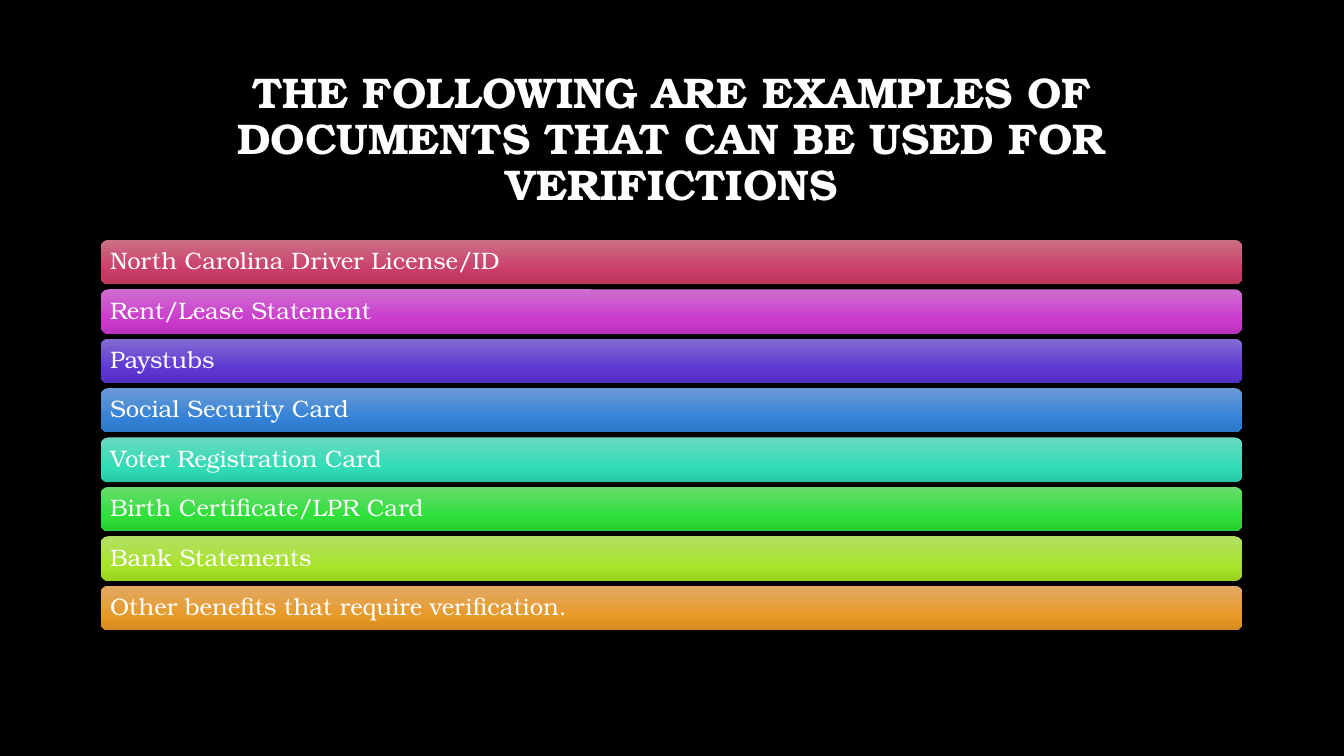
import copy
import dataclasses

import pptx
import pptx.dml.color
import pptx.enum.shapes
import pptx.enum.text
import pptx.oxml.ns
import pptx.util


@dataclasses.dataclass(frozen=True)
class Theme:
    font: str = "TeX Gyre Bonum"
    title_size: float = 30.6
    bar_size: float = 17
    background: str = "000000"
    text: str = "FFFFFF"
    stops: tuple = (0, 0.69, 1)
    gradients: tuple = (
        ("CC7087", "CA3D66", "BA355B"),
        ("CD6ECF", "CC3ACE", "BB32BE"),
        ("826CD3", "5E37D3", "532FC2"),
        ("6B9AD6", "3382D7", "2B76C6"),
        ("6AD9BF", "30DBB6", "28CAA7"),
        ("68DC6D", "2DDF37", "25CE2E"),
        ("B4DF67", "A7E329", "99D222"),
        ("E2AA66", "E79926", "D68B1F"),
    )


@dataclasses.dataclass(frozen=True)
class Grid:
    left: float = 1
    width: float = 11.32
    top: float = 2.38
    pitch: float = 0.49
    bar_rows: float = 0.9

    def box(self, row, rows):
        lengths = (self.left, self.top + row * self.pitch, self.width, rows * self.pitch)
        return [pptx.util.Inches(length) for length in lengths]


def rgb(value):
    return pptx.dml.color.RGBColor.from_string(value)


class Deck:
    def __init__(self, prs, theme, grid):
        self.theme = theme
        self.grid = grid
        self.s = prs.slides.add_slide(prs.slide_layouts[6])
        fill = self.s.background.fill
        fill.solid()
        fill.fore_color.rgb = rgb(theme.background)

    def set_text(self, sp, text, size, align, bold=False):
        tf = sp.text_frame
        tf.word_wrap = True
        tf.vertical_anchor = pptx.enum.text.MSO_ANCHOR.MIDDLE
        p = tf.paragraphs[0]
        p.text = text
        p.alignment = align
        p.line_spacing = 0.9
        p.font.name = self.theme.font
        p.font.size = pptx.util.Pt(size)
        p.font.bold = bold
        p.font.color.rgb = rgb(self.theme.text)
        return tf

    def title(self, text, row, rows):
        sp = self.s.shapes.add_textbox(*self.grid.box(row, rows))
        self.set_text(sp, text, self.theme.title_size, pptx.enum.text.PP_ALIGN.CENTER, bold=True)

    def paint(self, sp, colors):
        sp.fill.gradient()
        sp.fill.gradient_angle = 270
        stop_list = sp.element.spPr.find(".//" + pptx.oxml.ns.qn("a:gsLst"))
        stop_list.append(copy.deepcopy(stop_list[0]))
        for stop, position, color in zip(sp.fill.gradient_stops, self.theme.stops, colors):
            stop.position = position
            stop.color.rgb = rgb(color)

    def bar(self, text, row, colors):
        sp = self.s.shapes.add_shape(
            pptx.enum.shapes.MSO_SHAPE.ROUNDED_RECTANGLE,
            *self.grid.box(row, self.grid.bar_rows),
        )
        sp.shadow.inherit = False
        sp.line.fill.background()
        self.paint(sp, colors)
        tf = self.set_text(sp, text, self.theme.bar_size, pptx.enum.text.PP_ALIGN.LEFT)
        tf.margin_left = tf.margin_right = pptx.util.Inches(0.07)
        tf.margin_top = tf.margin_bottom = pptx.util.Inches(0.07)


DOCUMENTS = (
    "North Carolina Driver License/ID",
    "Rent/Lease Statement",
    "Paystubs",
    "Social Security Card",
    "Voter Registration Card",
    "Birth Certificate/LPR Card",
    "Bank Statements",
    "Other benefits that require verification.",
)


def main():
    prs = pptx.Presentation()
    prs.slide_width = pptx.util.Inches(13.33)
    prs.slide_height = pptx.util.Inches(7.5)
    theme = Theme()
    deck = Deck(prs, theme, Grid())
    deck.title(
        "THE FOLLOWING ARE EXAMPLES OF DOCUMENTS THAT CAN BE USED FOR VERIFICTIONS",
        row=-3.49,
        rows=2.96,
    )
    for row, (document, colors) in enumerate(zip(DOCUMENTS, theme.gradients)):
        deck.bar(document, row, colors)
    prs.save("out.pptx")


if __name__ == "__main__":
    main()
